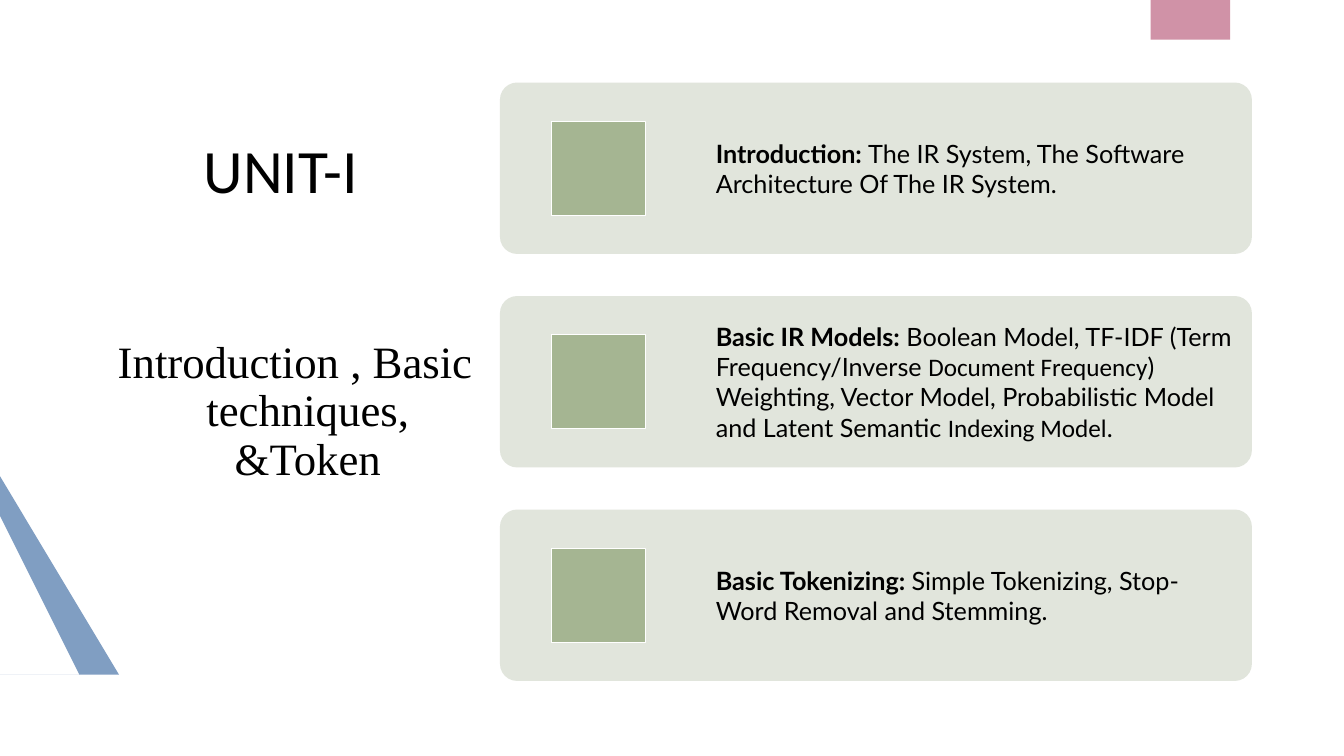
from math import asin, cos, pi, sin

from pptx import Presentation
from pptx.dml.color import RGBColor
from pptx.enum.shapes import MSO_SHAPE as SHAPE
from pptx.enum.text import MSO_ANCHOR as ANCHOR, PP_ALIGN as ALIGN
from pptx.util import Cm, Pt

SANS, CARD_FONT, SERIF = "Calibri", "Lato", "Times New Roman"

# Each card: (text, font, bold) runs
CARDS = [
    [("Introduction: ", CARD_FONT, True),
     ("The IR System, The Software Architecture Of The IR System.", CARD_FONT, False)],
    [("Basic IR Models:", CARD_FONT, True),
     (" Boolean Model, TF-IDF (Term Frequency/Inverse ", CARD_FONT, False),
     ("Document Frequency", SANS, False),
     (") Weighting, Vector Model, Probabilistic Model and Latent Semantic ",
      CARD_FONT, False),
     ("Indexing Model", SANS, False),
     (".", CARD_FONT, False)],
    [("Basic Tokenizing: ", CARD_FONT, True),
     ("Simple Tokenizing, Stop-Word Removal and Stemming.", CARD_FONT, False)],
]


def color(value):
    return RGBColor.from_string(value)


def paint(sp, fill, line=None):
    sp.shadow.inherit = False
    sp.fill.solid()
    sp.fill.fore_color.rgb = color(fill)
    if line:
        sp.line.color.rgb = color(line)
        sp.line.width = Pt(1)
    else:
        sp.line.fill.background()


def add_shape(s, kind, left, top, width, height, fill, line=None):
    sp = s.shapes.add_shape(kind, Cm(left), Cm(top), Cm(width), Cm(height))
    paint(sp, fill, line)
    return sp


def add_outline(s, points, fill):
    builder = s.shapes.build_freeform(*points[0], scale=Cm(1))
    builder.add_line_segments(points[1:], close=True)
    paint(builder.convert_to_shape(), fill)


def add_text(s, left, top, width, height, runs, size, anchor=ANCHOR.MIDDLE, inset=None):
    tf = s.shapes.add_textbox(Cm(left), Cm(top), Cm(width), Cm(height)).text_frame
    tf.word_wrap = True
    tf.vertical_anchor = anchor
    if inset:
        tf.margin_left = tf.margin_right = Cm(inset)
        tf.margin_top = tf.margin_bottom = Cm(inset)
    p = tf.paragraphs[0]
    for text, font, bold in runs:
        r = p.add_run()
        r.text = text
        r.font.name = font
        r.font.size = Pt(size)
        r.font.bold = bold
        r.font.color.rgb = color("000000")
    return p


def add_decoration(s):
    # Triangle corner at the left edge
    add_outline(s, [(0, 12.37), (2.64, 16.94), (2.67, 17.02), (2.65, 17.1),
                    (2.58, 17.18), (2.49, 17.2), (0, 17.2), (0, 16.84),
                    (2.18, 16.84), (0, 13.06)], "809EC2")
    # Circle segment hanging from the top edge
    x, y, radius, steps = 30.33, -0.2, 1.19, 40
    start = asin(-y / radius)
    angles = [start + (pi - 2 * start) * i / steps for i in range(steps + 1)]
    add_outline(s, [(x + radius * cos(a), y + radius * sin(a)) for a in angles],
                "D092A7")


def add_heading(s, left, top, width, height):
    # Unit title
    p = add_text(s, left + 2.54, top, 5.08, 2, [("UNIT-I", SANS, False)], 44)
    p.line_spacing = 0.9
    # Subtitle with hanging first line
    p = add_text(s, left, top + 5.05, width, height - 5.05,
                 [("Introduction , Basic techniques, &Token", SERIF, False)],
                 32, ANCHOR.TOP)
    p.alignment = ALIGN.CENTER
    p.line_spacing = 0.9
    pPr = p._p.get_or_add_pPr()
    pPr.set("marL", str(Cm(0.64)))
    pPr.set("indent", str(Cm(-0.64)))


def add_card(s, left, top, width, height, runs):
    card = add_shape(s, SHAPE.ROUNDED_RECTANGLE, left, top, width, height, "E1E5DC")
    card.adjustments[0] = 0.1
    icon = 2.37
    add_shape(s, SHAPE.RECTANGLE, left + 1.3, top + (height - icon) / 2, icon, icon,
              "A5B592", "FFFFFF")
    text_left = 4.98
    add_text(s, left + text_left, top, width - text_left, height, runs, 18, inset=0.46)


def add_cards(s, left, top, width, height):
    card_height = 4.32
    pitch = (height - card_height) / (len(CARDS) - 1)
    for i, runs in enumerate(CARDS):
        add_card(s, left, top + i * pitch, width, card_height, runs)


def main():
    prs = Presentation()
    prs.slide_width, prs.slide_height = Cm(33.87), Cm(19.05)
    s = prs.slides.add_slide(prs.slide_layouts[6])
    add_decoration(s)
    add_heading(s, 2.34, 3.38, 10.2, 13.77)
    add_cards(s, 12.6, 2.08, 18.95, 15.08)
    prs.save("out.pptx")


if __name__ == "__main__":
    main()
